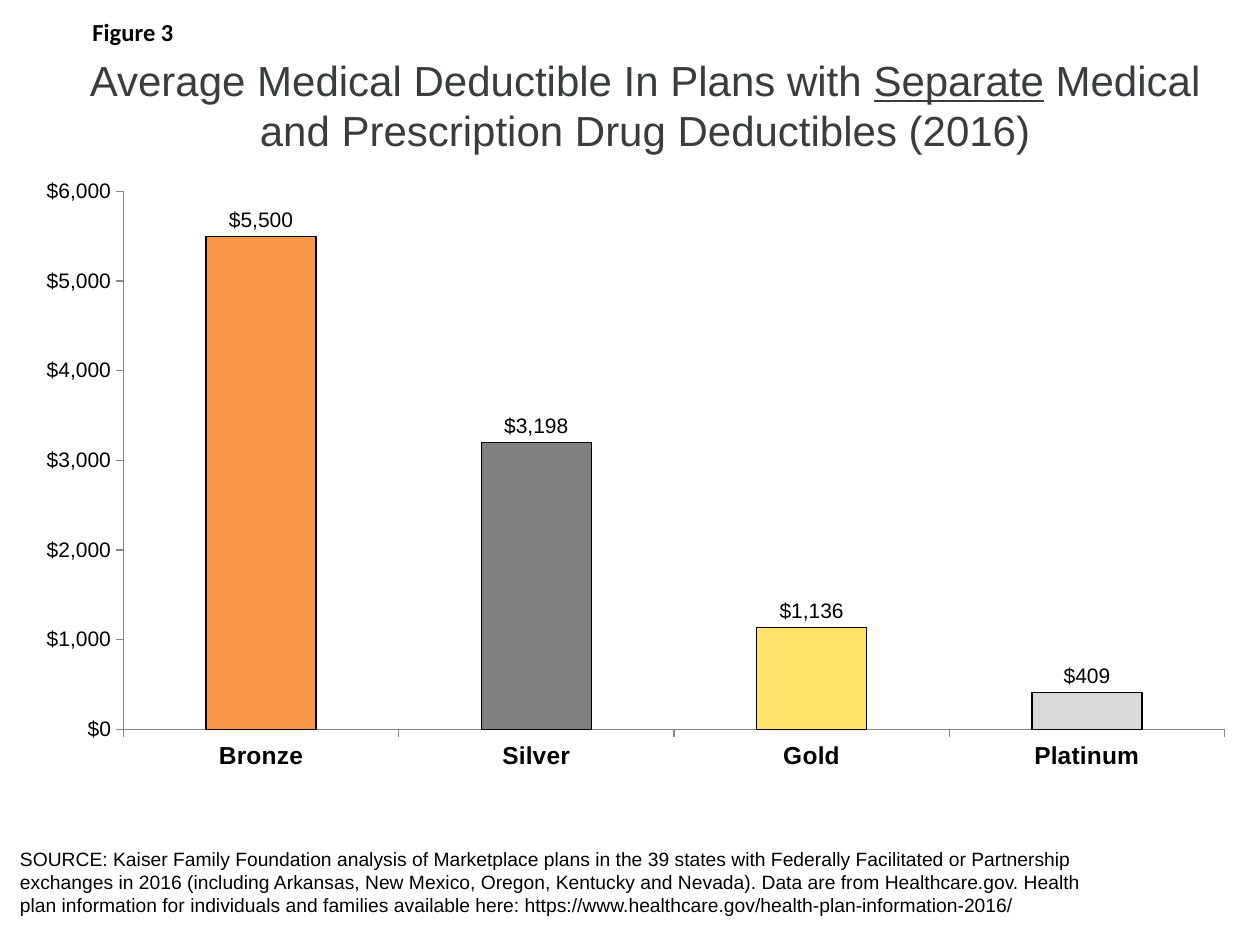
import pptx
import pptx.chart.data
import pptx.dml.color
import pptx.enum.chart
import pptx.enum.text
import pptx.oxml
import pptx.oxml.ns
import pptx.util
from dataclasses import dataclass

Inches = pptx.util.Inches
Pt = pptx.util.Pt


@dataclass(frozen=True)
class Theme:
    sans: str = "Arial"
    label: str = "Calibri"
    ink: str = "000000"
    head: str = "393D40"
    base: str = "082338"
    axis: str = "868686"
    head_size: int = 24
    fig_size: int = 14
    cat_size: int = 14
    num_size: int = 12
    note_size: int = 11


THEME = Theme()
MONEY = '"$"#,##0'

# Metal tier, deductible, bar colour
TIERS = [
    ("Bronze", 5500, "F79747"),
    ("Silver", 3198, "808080"),
    ("Gold", 1136, "FEE26A"),
    ("Platinum", 409, "D9D9D9"),
]

TITLE = [
    ("Average Medical Deductible In Plans with ", False),
    ("Separate", True),
    (" Medical and Prescription Drug Deductibles (2016)", False),
]

SOURCE = (
    "SOURCE: Kaiser Family Foundation analysis of Marketplace plans in the 39 states "
    "with Federally Facilitated or Partnership exchanges in 2016 (including Arkansas, "
    "New Mexico, Oregon, Kentucky and Nevada). Data are from Healthcare.gov. Health "
    "plan information for individuals and families available here: "
    "https://www.healthcare.gov/health-plan-information-2016/"
)


def rgb(code):
    return pptx.dml.color.RGBColor.from_string(code)


def set_font(font, size, color, name=THEME.sans, bold=False):
    font.name = name
    font.size = Pt(size)
    font.bold = bold
    font.color.rgb = rgb(color)


def add_text(slide, box, runs, size, color, name=THEME.sans, bold=False, center=False):
    """Add a wrapped one-paragraph box; runs are (text, underlined) pairs."""
    frame = slide.shapes.add_textbox(*map(Inches, box)).text_frame
    frame.word_wrap = True
    frame.vertical_anchor = pptx.enum.text.MSO_ANCHOR.MIDDLE
    para = frame.paragraphs[0]
    if center:
        para.alignment = pptx.enum.text.PP_ALIGN.CENTER
    for text, under in runs:
        run = para.add_run()
        run.text = text
        set_font(run.font, size, color, name, bold)
        run.font.underline = under


def set_plot(chart, box, plot):
    """Fix the inner plot area; both boxes are in slide inches."""
    left, top, width, height = box
    parts = {
        "x": (plot[0] - left) / width,
        "y": (plot[1] - top) / height,
        "w": plot[2] / width,
        "h": plot[3] / height,
    }
    modes = "".join(f'<c:{key}Mode val="edge"/>' for key in "xy")
    sizes = "".join(f'<c:{key} val="{val:.4f}"/>' for key, val in parts.items())
    area = chart.plots[0]._element.getparent()
    for old in area.findall(pptx.oxml.ns.qn("c:layout")):
        area.remove(old)
    area.insert(0, pptx.oxml.parse_xml(
        f'<c:layout {pptx.oxml.ns.nsdecls("c")}><c:manualLayout>'
        f'<c:layoutTarget val="inner"/>{modes}{sizes}</c:manualLayout></c:layout>'
    ))


def set_axis(axis, size, bold=False):
    axis.has_major_gridlines = False
    axis.major_tick_mark = pptx.enum.chart.XL_TICK_MARK.OUTSIDE
    axis.minor_tick_mark = pptx.enum.chart.XL_TICK_MARK.NONE
    axis.format.line.color.rgb = rgb(THEME.axis)
    axis.format.line.width = Pt(0.75)
    set_font(axis.tick_labels.font, size, THEME.ink, bold=bold)


def add_bars(slide, box, plot):
    data = pptx.chart.data.CategoryChartData(number_format=MONEY)
    data.categories = [name for name, _, _ in TIERS]
    data.add_series("Series 1", [value for _, value, _ in TIERS])
    kind = pptx.enum.chart.XL_CHART_TYPE.COLUMN_CLUSTERED
    chart = slide.shapes.add_chart(kind, *map(Inches, box), data).chart
    chart.has_legend = False
    chart.has_title = False
    set_font(chart.font, 18, THEME.ink)
    set_plot(chart, box, plot)

    # Axes
    set_axis(chart.category_axis, THEME.cat_size, bold=True)
    set_axis(chart.value_axis, THEME.num_size)
    chart.value_axis.minimum_scale = 0
    chart.value_axis.maximum_scale = 6000
    chart.value_axis.major_unit = 1000
    ticks = chart.value_axis.tick_labels
    ticks.number_format = MONEY
    ticks.number_format_is_linked = False

    # Bars, one colour per tier
    bars = chart.plots[0]
    bars.gap_width = 150
    bars.vary_by_categories = False
    series = bars.series[0]
    series.format.fill.solid()
    series.format.fill.fore_color.rgb = rgb(THEME.base)
    for index, (_, _, color) in enumerate(TIERS):
        look = series.points[index].format
        look.fill.solid()
        look.fill.fore_color.rgb = rgb(color)
        look.line.color.rgb = rgb(THEME.ink)
        look.line.width = Pt(0.75)

    # Value labels
    labels = series.data_labels
    labels.show_value = True
    labels.number_format = MONEY
    labels.number_format_is_linked = False
    labels.position = pptx.enum.chart.XL_LABEL_POSITION.OUTSIDE_END
    set_font(labels.font, THEME.num_size, THEME.ink)


def main():
    deck = pptx.Presentation()
    deck.slide_width = Inches(10)
    deck.slide_height = Inches(7.5)
    slide = deck.slides.add_slide(deck.slide_layouts[6])

    # Source note
    add_text(slide, (0.06, 6.67, 8.78, 0.66), [(SOURCE, False)],
             THEME.note_size, THEME.ink)
    # Deductible chart
    add_bars(slide, (0.18, 1.33, 9.73, 4.87), (0.98, 1.52, 8.74, 4.27))
    # Heading and figure number
    add_text(slide, (0.34, 0.33, 9.56, 1), TITLE,
             THEME.head_size, THEME.head, center=True)
    add_text(slide, (0.18, 0.08, 1.75, 0.34), [("Figure 3", False)],
             THEME.fig_size, THEME.ink, THEME.label, bold=True, center=True)

    deck.save("out.pptx")


if __name__ == "__main__":
    main()
